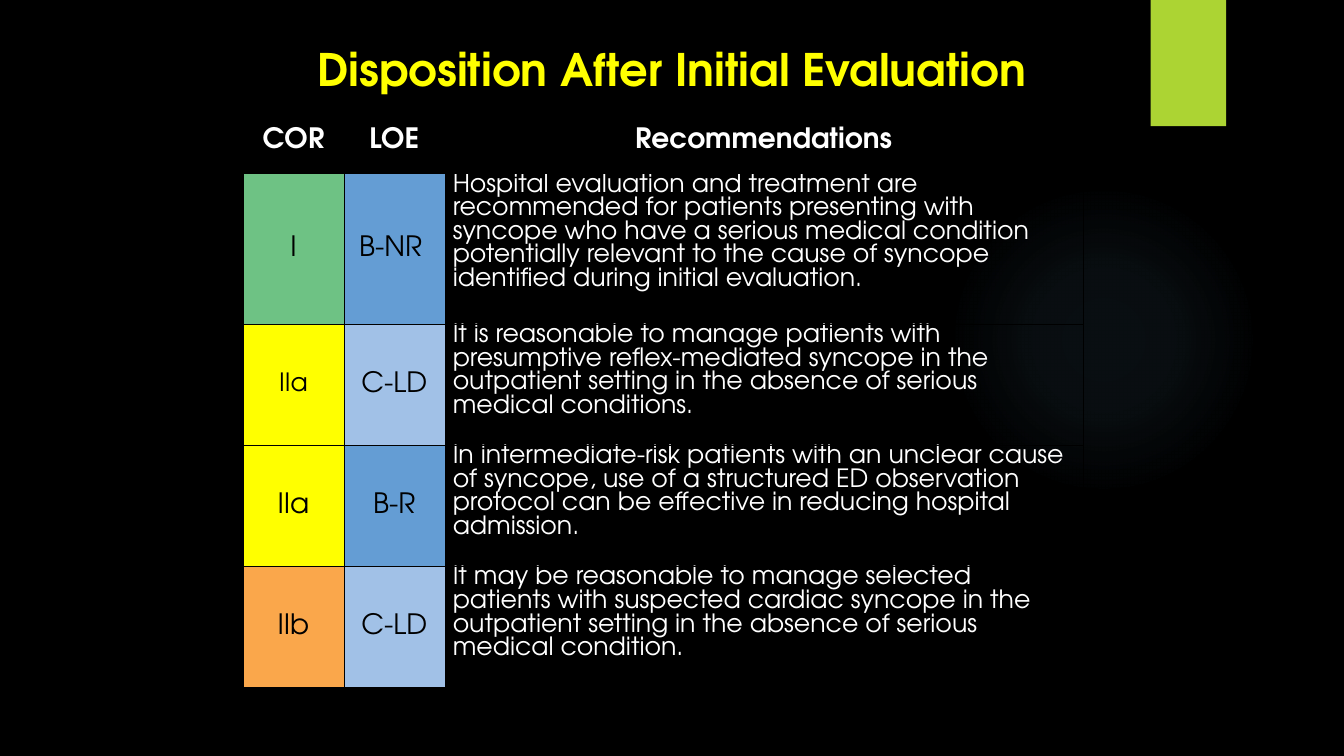
from lxml import etree
from pptx import Presentation
from pptx.dml.color import RGBColor
from pptx.enum.shapes import MSO_SHAPE
from pptx.enum.text import MSO_ANCHOR, PP_ALIGN
from pptx.oxml import parse_xml
from pptx.oxml.ns import qn
from pptx.util import Cm, Pt

CENTER, LEFT = PP_ALIGN.CENTER, PP_ALIGN.LEFT
MIDDLE, TOP = MSO_ANCHOR.MIDDLE, MSO_ANCHOR.TOP
OVAL, RECTANGLE = MSO_SHAPE.OVAL, MSO_SHAPE.RECTANGLE

FONT = "TeX Gyre Adventor"
BLACK = RGBColor(0x00, 0x00, 0x00)
WHITE = RGBColor(0xFF, 0xFF, 0xFF)
YELLOW = RGBColor(0xFF, 0xFF, 0x00)
LIME = RGBColor(0xAC, 0xD4, 0x33)
GLOW = RGBColor(0x7A, 0xC4, 0xF0)
GREEN = RGBColor(0x6E, 0xC2, 0x84)
ORANGE = RGBColor(0xFA, 0xA7, 0x4B)
BLUE = RGBColor(0x64, 0x9D, 0xD4)
PALE_BLUE = RGBColor(0xA1, 0xC1, 0xE7)

GLOW_STOPS = [(0, 7), (36, 6), (69, 0)]
COLUMN_WIDTHS = [2.54, 2.54, 16.08]
ROW_HEIGHTS = [1.63, 3.8, 3.05, 3.05, 3.05]
HEADERS = ["COR", "LOE", "Recommendations"]
COR_FILLS = {"I": GREEN, "IIa": YELLOW, "IIb": ORANGE}
LOE_FILLS = {"B-NR": BLUE, "B-R": BLUE, "C-LD": PALE_BLUE}
RECOMMENDATIONS = [
    ("I", 20, "B-NR",
     "Hospital evaluation and treatment are recommended for patients presenting "
     "with syncope who have a serious medical condition potentially relevant to "
     "the cause of syncope identified during initial evaluation."),
    ("IIa", 18, "C-LD",
     "It is reasonable to manage patients with presumptive reflex-mediated "
     "syncope in the outpatient setting in the absence of serious medical "
     "conditions."),
    ("IIa", 20, "B-R",
     "In intermediate-risk patients with an unclear cause of syncope, use of a "
     "structured ED observation protocol can be effective in reducing hospital "
     "admission."),
    ("IIb", 20, "C-LD",
     "It may be reasonable to manage selected patients with suspected cardiac "
     "syncope in the outpatient setting in the absence of serious medical "
     "condition."),
]


def add_run(p, text, size, color, bold=False):
    r = p.add_run()
    r.text = text
    r.font.name = FONT
    r.font.size = Pt(size)
    r.font.bold = bold
    r.font.color.rgb = color


def add_plain_shape(s, kind, left, top, width, height):
    sp = s.shapes.add_shape(kind, Cm(left), Cm(top), Cm(width), Cm(height))
    sp.shadow.inherit = False
    sp.line.fill.background()
    return sp


def add_glow(s, left, top, size):
    sp = add_plain_shape(s, OVAL, left, top, size, size)
    sp.fill.background()
    stops = "".join(
        f'<a:gs pos="{pos * 1000}"><a:srgbClr val="{GLOW}">'
        f'<a:alpha val="{alpha * 1000}"/></a:srgbClr></a:gs>'
        for pos, alpha in GLOW_STOPS)
    gradient = parse_xml(
        '<a:gradFill xmlns:a="http://schemas.openxmlformats.org/drawingml/2006/main">'
        f'<a:gsLst>{stops}</a:gsLst><a:path path="circle">'
        '<a:fillToRect l="50000" t="50000" r="50000" b="50000"/></a:path></a:gradFill>')
    props = sp.element.spPr
    props.replace(props.find(qn("a:noFill")), gradient)


def add_tab(s, left, top, width, height):
    sp = add_plain_shape(s, RECTANGLE, left, top, width, height)
    sp.fill.solid()
    sp.fill.fore_color.rgb = LIME


def set_title(s, left, top, width, height):
    title = s.shapes.title
    title.left, title.top = Cm(left), Cm(top)
    title.width, title.height = Cm(width), Cm(height)
    tf = title.text_frame
    tf.word_wrap = True
    tf.vertical_anchor = MIDDLE
    p = tf.paragraphs[0]
    p.alignment = CENTER
    add_run(p, "Disposition After Initial Evaluation", 32, YELLOW, True)


def add_borders(cell):
    props = cell._tc.get_or_add_tcPr()
    for i, side in enumerate(("lnL", "lnR", "lnT", "lnB")):
        line = etree.Element(qn(f"a:{side}"), w=str(Pt(1)))
        fill = etree.SubElement(line, qn("a:solidFill"))
        etree.SubElement(fill, qn("a:srgbClr"), val=str(BLACK))
        props.insert(i, line)


def format_cell(cell, fill=None, align=CENTER, anchor=MIDDLE):
    cell.margin_left, cell.margin_right = Cm(0.19), Cm(0.22)
    cell.margin_top = cell.margin_bottom = 0
    cell.vertical_anchor = anchor
    if fill is None:
        cell.fill.background()
    else:
        cell.fill.solid()
        cell.fill.fore_color.rgb = fill
    add_borders(cell)
    p = cell.text_frame.paragraphs[0]
    p.alignment = align
    return p


def add_recommendations(s, left, top):
    frame = s.shapes.add_table(
        len(ROW_HEIGHTS), len(COLUMN_WIDTHS), Cm(left), Cm(top),
        Cm(sum(COLUMN_WIDTHS)), Cm(sum(ROW_HEIGHTS)))
    table = frame.table
    table.first_row = table.horz_banding = False
    for column, width in zip(table.columns, COLUMN_WIDTHS):
        column.width = Cm(width)
    for row, height in zip(table.rows, ROW_HEIGHTS):
        row.height = Cm(height)

    for i, header in enumerate(HEADERS):
        add_run(format_cell(table.cell(0, i)), header, 20, WHITE, True)
    for i, (cor, cor_size, loe, advice) in enumerate(RECOMMENDATIONS, 1):
        p = format_cell(table.cell(i, 0), COR_FILLS[cor])
        add_run(p, cor, cor_size, BLACK)
        p = format_cell(table.cell(i, 1), LOE_FILLS[loe])
        add_run(p, loe, 20, BLACK)
        if loe == "B-NR":
            add_run(p, " ", 18, WHITE, True)
        p = format_cell(table.cell(i, 2), align=LEFT, anchor=TOP)
        add_run(p, advice, 18, WHITE)


def main():
    prs = Presentation()
    prs.slide_width, prs.slide_height = Cm(33.87), Cm(19.05)
    s = prs.slides.add_slide(prs.slide_layouts[5])
    s.background.fill.solid()
    s.background.fill.fore_color.rgb = BLACK
    add_glow(s, 23.9, 4.65, 7.82)
    add_tab(s, 29, 0, 1.9, 3.18)
    set_title(s, 6.88, 0.91, 20.12, 1.63)
    add_recommendations(s, 6.14, 2.74)
    prs.save("out.pptx")


if __name__ == "__main__":
    main()
